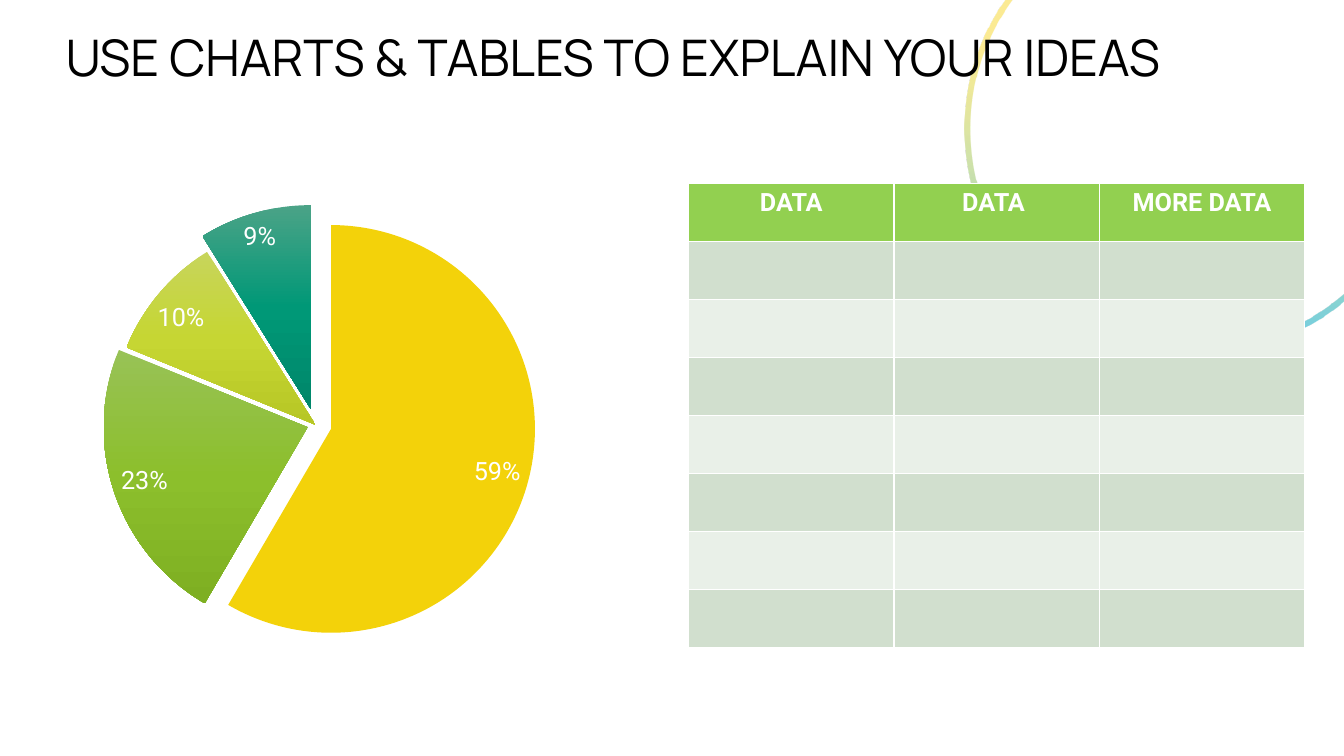
import math
from dataclasses import dataclass

import lxml.etree
import pptx
import pptx.chart.data
import pptx.dml.color
import pptx.enum.chart
import pptx.enum.text
import pptx.oxml
import pptx.oxml.ns
import pptx.util

Inches, Pt = pptx.util.Inches, pptx.util.Pt
WIDTH, HEIGHT = 13.33, 7.5


@dataclass(frozen=True)
class Theme:
    """Colours, fonts and type sizes of the deck."""
    heading_font: str = "Manrope"
    body_font: str = "Roboto"
    title_size: int = 36
    body_size: int = 18
    chart_size: int = 10
    ink: str = "000000"
    paper: str = "FFFFFF"
    header: str = "92D050"
    bands: tuple = ("D1DFCE", "E9F0E8")
    ring: tuple = ((15, "F5D208", 43), (100, "05ABD8", 60))
    yellow: str = "F3D20A"
    green: tuple = ((0, "98C256", 100), (50, "8CBF2C", 100), (100, "7EAF22", 100))
    lime: tuple = ((0, "C7D55B", 100), (50, "C6D633", 100), (100, "B7C725", 100))
    teal: tuple = ((0, "4BA387", 100), (50, "009877", 100), (100, "00876A", 100))


THEME = Theme()


def colour(code):
    """Turn a hex code into a colour."""
    return pptx.dml.color.RGBColor.from_string(code)


def child(parent, tag, **attributes):
    """Append an XML child with the given attributes."""
    element = lxml.etree.SubElement(parent, pptx.oxml.ns.qn(tag))
    for name, value in attributes.items():
        element.set(name, str(value))
    return element


def style(font, name, size, code, bold=False):
    """Set the face, size, colour and weight of a font."""
    font.name, font.size, font.bold = name, Pt(size), bold
    font.color.rgb = colour(code)


def paint(fill, properties, paint_value):
    """Fill with a flat colour or a top-to-bottom gradient."""
    if isinstance(paint_value, str):
        fill.solid()
        fill.fore_color.rgb = colour(paint_value)
        return
    fill.gradient()
    gradient = properties.find(pptx.oxml.ns.qn("a:gradFill"))
    for part in list(gradient):
        gradient.remove(part)
    stops = child(gradient, "a:gsLst")
    for position, code, opacity in paint_value:
        stop = child(stops, "a:gs", pos=position * 1000)
        tint = child(stop, "a:srgbClr", val=code)
        if opacity < 100:
            child(tint, "a:alpha", val=opacity * 1000)
    child(gradient, "a:lin", ang=90 * 60000, scaled=0)


def arc_points(centre_x, centre_y, across, down):
    """List the Bezier points of an arc from the top edge to the right edge."""
    first = math.pi + math.asin(centre_y / down)
    last = math.acos((WIDTH - centre_x) / across)
    angles = [first, math.pi, math.pi / 2, last]

    def place(angle, pull=0):
        x = math.cos(angle) - pull * math.sin(angle)
        y = math.sin(angle) + pull * math.cos(angle)
        return Inches(centre_x + across * x), Inches(centre_y + down * y)

    points = [place(first)]
    for start, end in zip(angles, angles[1:]):
        pull = 4 / 3 * math.tan((end - start) / 4)
        points += [place(start, pull), place(end, -pull), place(end)]
    return points


def curve_lines(outline, first, count):
    """Join runs of three line segments into Bezier curves."""
    lines = outline.findall(pptx.oxml.ns.qn("a:lnTo"))[first:first + 3 * count]
    for index in range(0, len(lines), 3):
        curve = lxml.etree.Element(pptx.oxml.ns.qn("a:cubicBezTo"))
        lines[index].addprevious(curve)
        for line in lines[index:index + 3]:
            curve.append(line[0])
            outline.remove(line)


def add_ring(page, centre_x, centre_y, radius_x, radius_y, thickness):
    """Draw the part of a large ring that lies on the slide."""
    outer = arc_points(centre_x, centre_y, radius_x, radius_y)
    inner = arc_points(centre_x, centre_y, radius_x - thickness, radius_y - thickness)
    builder = page.shapes.build_freeform(*outer[0])
    builder.add_line_segments(outer[1:] + inner[::-1], close=True)
    ring = builder.convert_to_shape()
    outline = ring.element.find(".//" + pptx.oxml.ns.qn("a:path"))
    curves = len(outer) // 3
    curve_lines(outline, 3 * curves + 1, curves)
    curve_lines(outline, 0, curves)
    ring.shadow.inherit = False
    ring.line.fill.background()
    paint(ring.fill, ring.element.spPr, THEME.ring)
    page.shapes.title.element.addprevious(ring.element)


def add_title(page, box, words):
    """Place and format the title placeholder."""
    title = page.shapes.title
    title.left, title.top, title.width, title.height = map(Inches, box)
    frame = title.text_frame
    frame.word_wrap = True
    frame.auto_size = pptx.enum.text.MSO_AUTO_SIZE.NONE
    frame.vertical_anchor = pptx.enum.text.MSO_ANCHOR.BOTTOM
    frame.margin_left = frame.margin_right = Inches(0.1)
    frame.margin_top = frame.margin_bottom = Inches(0.1)
    para = frame.paragraphs[0]
    para.alignment = pptx.enum.text.PP_ALIGN.LEFT
    para.line_spacing = 0.9
    span = para.add_run()
    span.text = words
    style(span.font, THEME.heading_font, THEME.title_size, THEME.ink)


def set_plot_box(chart, **shares):
    """Fix the inner plot area as shares of the chart."""
    area = chart._chartSpace.chart.plotArea
    for old in area.findall(pptx.oxml.ns.qn("c:layout")):
        area.remove(old)
    layout = pptx.oxml.parse_xml("<c:layout %s/>" % pptx.oxml.ns.nsdecls("c"))
    manual = child(layout, "c:manualLayout")
    child(manual, "c:layoutTarget", val="inner")
    for name in ("xMode", "yMode"):
        child(manual, "c:" + name, val="edge")
    for name, share in shares.items():
        child(manual, "c:" + name, val=share)
    area.insert(0, layout)


def add_pie(page, box, slices):
    """Add a pie of (value, explosion, paint) slices with inside labels."""
    chart_data = pptx.chart.data.CategoryChartData()
    chart_data.categories = [str(number + 1) for number in range(len(slices))]
    chart_data.add_series("Series 1", [value for value, _, _ in slices])
    chart = page.shapes.add_chart(
        pptx.enum.chart.XL_CHART_TYPE.PIE, *map(Inches, box), chart_data).chart
    chart.has_title = chart.has_legend = False
    style(chart.font, THEME.body_font, THEME.chart_size, THEME.ink)
    set_plot_box(chart, x=0.027, y=0.056, w=0.929, h=0.903)
    plot = chart.plots[0]
    plot.vary_by_categories = True
    for number, (_, explosion, slice_paint) in enumerate(slices):
        look = plot.series[0].points[number].format
        properties = look._element.get_or_add_spPr()
        paint(look.fill, properties, slice_paint)
        look.line.fill.background()
        distance = child(look._element, "c:explosion", val=explosion)
        properties.addprevious(distance)
    plot.has_data_labels = True
    labels = plot.data_labels
    labels.show_value = True
    labels.number_format, labels.number_format_is_linked = '0"%"', False
    labels.position = pptx.enum.chart.XL_LABEL_POSITION.BEST_FIT
    style(labels.font, THEME.body_font, THEME.body_size, THEME.paper)


def add_data_table(page, box, headings, row_count):
    """Add a banded table with a heading row."""
    table = page.shapes.add_table(row_count, len(headings), *map(Inches, box)).table
    for row in range(row_count):
        for column, heading in enumerate(headings):
            cell = table.cell(row, column)
            cell.fill.solid()
            cell.fill.fore_color.rgb = colour(THEME.bands[(row - 1) % 2] if row else THEME.header)
            if row == 0:
                para = cell.text_frame.paragraphs[0]
                para.alignment = pptx.enum.text.PP_ALIGN.CENTER
                span = para.add_run()
                span.text = heading
                style(span.font, THEME.body_font, THEME.body_size, THEME.paper, bold=True)


def main():
    """Build the one-slide deck."""
    deck = pptx.Presentation()
    deck.slide_width, deck.slide_height = Inches(WIDTH), Inches(HEIGHT)
    page = deck.slides.add_slide(deck.slide_layouts[5])
    add_ring(page, 11.85, 1.28, 2.28, 2.24, 0.06)
    add_title(page, (0.55, 0.21, 12.55, 0.76), "USE CHARTS & TABLES TO EXPLAIN YOUR IDEAS")
    add_pie(page, (-0.18, 1.94, 6.73, 4.48), [
        (59, 8, THEME.yellow), (23, 4, THEME.green), (10, 0, THEME.lime), (9, 8, THEME.teal)])
    add_data_table(page, (6.83, 1.82, 6.11, 4.61), ["DATA", "DATA ", "MORE DATA"], 8)
    deck.save("out.pptx")


if __name__ == "__main__":
    main()
